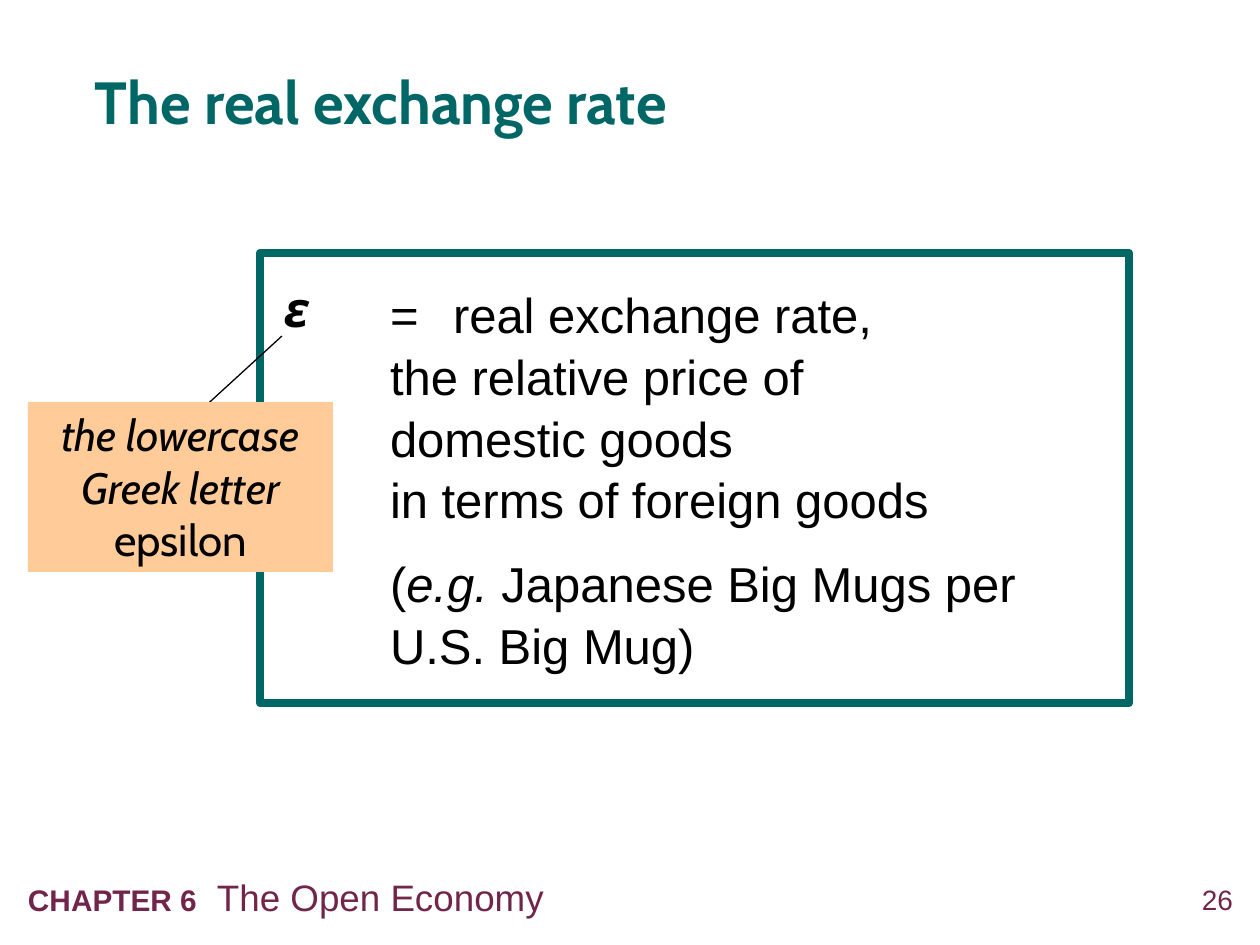
import lxml.etree
import pptx
import pptx.dml.color
import pptx.enum.shapes
import pptx.enum.text
import pptx.oxml.ns
import pptx.util

ALIGN = pptx.enum.text.PP_ALIGN
ANCHOR = pptx.enum.text.MSO_ANCHOR
INSET = 12, 6


def emu(px):
    return round(px * 914400 / 126)


def color(hex_code):
    return pptx.dml.color.RGBColor.from_string(hex_code)


def write(paragraph, text, *, size, font="Arial", ink="000000", bold=False, italic=False):
    for index, line in enumerate(text.split("\n")):
        if index:
            paragraph.add_line_break()
        run = paragraph.add_run()
        run.text = line
        run.font.name = font
        run.font.size = pptx.util.Pt(size)
        run.font.bold = bold
        run.font.italic = italic
        run.font.color.rgb = color(ink)


def add_child(parent, tag, **attributes):
    child = lxml.etree.SubElement(parent, pptx.oxml.ns.qn(tag))
    for key, value in attributes.items():
        child.set(key, str(value))
    return child


def set_indent(paragraph, left, first=0, tabs=()):
    properties = paragraph._p.get_or_add_pPr()
    properties.set("marL", str(emu(left)))
    properties.set("indent", str(emu(first)))
    add_child(properties, "a:buNone")
    if tabs:
        stops = add_child(properties, "a:tabLst")
        for position in tabs:
            add_child(stops, "a:tab", pos=emu(position), algn="l")


class SlideBuilder:
    accent = "006666"
    footer_ink = "71254B"
    callout_fill = "FFCC99"

    def __init__(self, slide):
        self.slide = slide

    def frame(self, shape, inset=INSET, anchor=ANCHOR.TOP, align=ALIGN.LEFT):
        frame = shape.text_frame
        frame.word_wrap = True
        frame.auto_size = pptx.enum.text.MSO_AUTO_SIZE.NONE
        frame.vertical_anchor = anchor
        frame.margin_left = frame.margin_right = emu(inset[0])
        frame.margin_top = frame.margin_bottom = emu(inset[1])
        frame.paragraphs[0].alignment = align
        return frame

    def placeholder(self, index, box, **layout):
        shape = self.slide.placeholders[index]
        shape.left, shape.top, shape.width, shape.height = map(emu, box)
        frame = self.frame(shape, anchor=ANCHOR.MIDDLE, **layout)
        frame.paragraphs[0].line_spacing = 1.05
        return shape, frame

    def title(self, text, box):
        _, frame = self.placeholder(0, box, inset=(0, 0))
        write(frame.paragraphs[0], text, size=34, font="Cabin", ink=self.accent, bold=True)

    def body(self, box):
        shape, frame = self.placeholder(1, box)
        shape.line.color.rgb = color(self.accent)
        shape.line.width = pptx.util.Pt(5)
        return frame

    def label(self, box, **layout):
        shape = self.slide.shapes.add_textbox(*map(emu, box))
        return self.frame(shape, **layout).paragraphs[0]

    def callout(self, box):
        shape = self.slide.shapes.add_shape(
            pptx.enum.shapes.MSO_SHAPE.RECTANGLE, *map(emu, box))
        shape.shadow.inherit = False
        shape.fill.solid()
        shape.fill.fore_color.rgb = color(self.callout_fill)
        shape.line.fill.background()
        return self.frame(shape, align=ALIGN.CENTER).paragraphs[0]

    def leader(self, start, end):
        line = self.slide.shapes.add_connector(
            pptx.enum.shapes.MSO_CONNECTOR.STRAIGHT, *map(emu, (*start, *end)))
        line.line.color.rgb = color("000000")
        line.line.width = pptx.util.Pt(0.75)
        add_child(line._element.spPr, "a:effectLst")


def main():
    deck = pptx.Presentation()
    deck.slide_width = pptx.util.Inches(10)
    deck.slide_height = pptx.util.Inches(7.5)
    builder = SlideBuilder(deck.slides.add_slide(deck.slide_layouts[1]))

    page_number = builder.label((1164, 883, 69, 40), inset=(0, 0), align=ALIGN.RIGHT)
    write(page_number, "26", size=16, ink=builder.footer_ink)

    chapter = builder.label((16, 869, 1031, 57))
    set_indent(chapter, 0, tabs=(203,))
    write(chapter, "CHAPTER 6\t", size=17, ink=builder.footer_ink, bold=True)
    write(chapter, "The Open Economy", size=21, ink=builder.footer_ink)

    builder.title("The real exchange rate", (95, 33, 1096, 132))

    definition = builder.body((260, 253, 869, 450))
    meaning = definition.paragraphs[0]
    set_indent(meaning, 118, -118, tabs=(56, 118))
    write(meaning, "\t=\treal exchange rate,\nthe relative price of\n"
          "domestic goods\nin terms of foreign goods", size=28)

    example = definition.add_paragraph()
    example.alignment = ALIGN.LEFT
    example.line_spacing = 1.05
    example.space_before = pptx.util.Pt(12.6)
    set_indent(example, 118)
    write(example, "(", size=28)
    write(example, "e.g. ", size=28, italic=True)
    write(example, "Japanese Big Mugs per U.S. Big Mug)", size=28)

    builder.leader((282, 336), (200, 411))
    letter_name = builder.callout((28, 402, 305, 170))
    write(letter_name, "the lowercase Greek letter ", size=25, font="Cabin", italic=True)
    write(letter_name, "epsilon", size=25, font="Cabin")

    epsilon = builder.label((270, 273, 53, 72), align=ALIGN.CENTER)
    write(epsilon, "ε", size=28, font="Cabin", bold=True, italic=True)

    deck.save("out.pptx")


if __name__ == "__main__":
    main()
